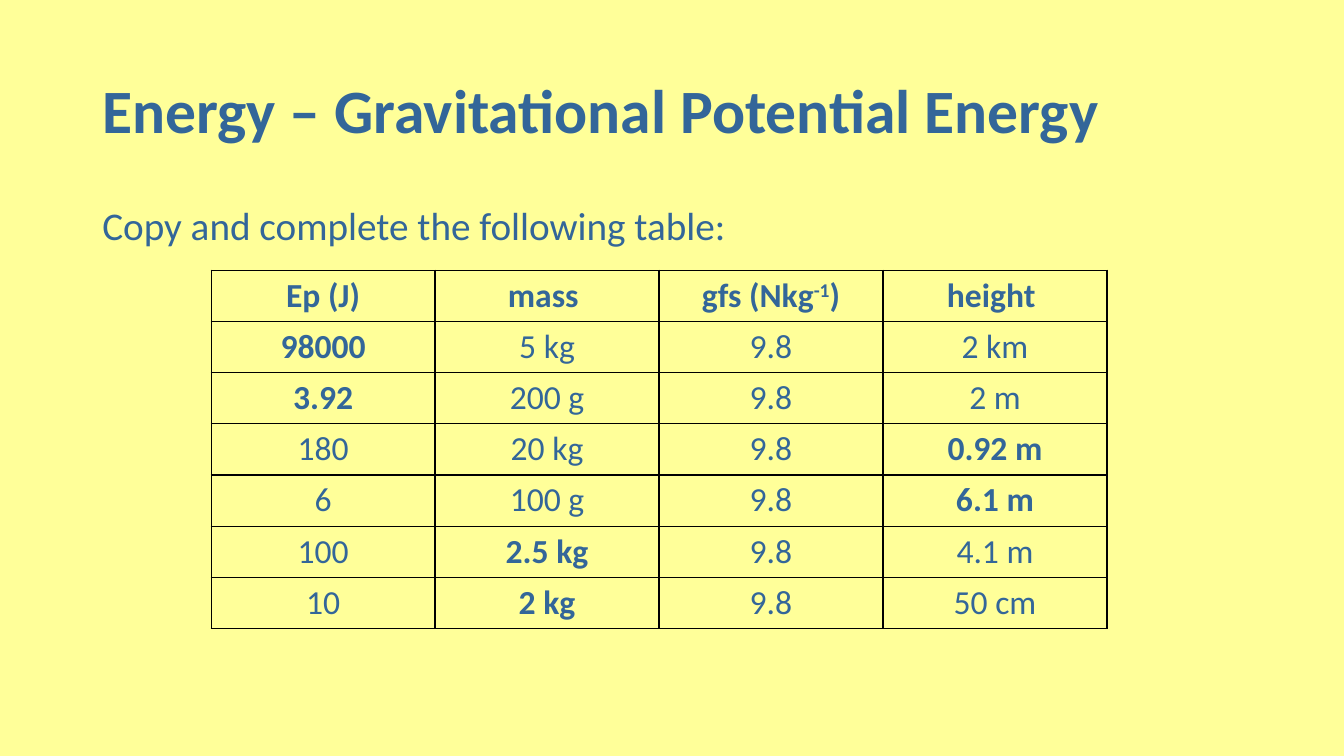
from lxml import etree
from pptx import Presentation
from pptx.dml.color import RGBColor
from pptx.enum import text
from pptx.oxml import ns
from pptx.util import Cm, Pt

COLOURS = {"background": "FFFF99", "ink": "336699", "border": "000000"}
FONT = "Calibri"

# Each heading is a list of (wording, is superscript) runs.
HEADINGS = [
    [("Ep (J)", False)],
    [("mass ", False)],
    [("gfs (Nkg", False), ("-1", True), (")", False)],
    [("height ", False)],
]
# Each row holds its values and the column of the answer, which is bold.
EXERCISES = [
    (("98000", "5 kg", "9.8", "2 km"), 0),
    (("3.92", "200 g", "9.8", "2 m"), 0),
    (("180", "20 kg", "9.8", "0.92 m"), 3),
    (("6", "100 g", "9.8", "6.1 m"), 3),
    (("100", "2.5 kg", "9.8", "4.1 m"), 1),
    (("10", "2 kg", "9.8", "50 cm"), 1),
]


def add_run(paragraph, wording, size, bold=False, superscript=False):
    run = paragraph.add_run()
    run.text = wording
    run.font.name = FONT
    run.font.size = Pt(size)
    run.font.bold = bold
    run.font.color.rgb = RGBColor.from_string(COLOURS["ink"])
    if superscript:
        run._r.get_or_add_rPr().set("baseline", "30000")


def set_background(slide):
    fill = slide.background.fill
    fill.solid()
    fill.fore_color.rgb = RGBColor.from_string(COLOURS["background"])


def add_title(slide, wording):
    title = slide.shapes.title
    title.left, title.top = Cm(2.33), Cm(1.01)
    title.width, title.height = Cm(29.21), Cm(3.68)
    frame = title.text_frame
    frame.word_wrap = True
    frame.vertical_anchor = text.MSO_ANCHOR.MIDDLE
    heading = frame.paragraphs[0]
    heading.alignment = text.PP_ALIGN.LEFT
    heading.line_spacing = 0.9
    add_run(heading, wording, 44, bold=True)


def add_instruction(slide, wording):
    box = slide.shapes.add_textbox(Cm(2.33), Cm(5.07), Cm(29.21), Cm(12.09))
    box.text_frame.word_wrap = True
    instruction = box.text_frame.paragraphs[0]
    instruction.line_spacing = 0.9
    instruction.space_before = Pt(10)
    add_run(instruction, wording, 28)


def add_borders(cell):
    properties = cell._tc.get_or_add_tcPr()
    for index, side in enumerate(("a:lnL", "a:lnR", "a:lnT", "a:lnB")):
        line = etree.Element(ns.qn(side), w=str(Pt(1)))
        fill = etree.SubElement(line, ns.qn("a:solidFill"))
        etree.SubElement(fill, ns.qn("a:srgbClr"), val=COLOURS["border"])
        properties.insert(index, line)


def fill_cell(cell, runs, bold):
    cell.fill.background()
    add_borders(cell)
    paragraph = cell.text_frame.paragraphs[0]
    paragraph.alignment = text.PP_ALIGN.CENTER
    for wording, superscript in runs:
        add_run(paragraph, wording, 24, bold, superscript)


def add_exercise_table(slide):
    row_count = len(EXERCISES) + 1
    table = slide.shapes.add_table(
        row_count, len(HEADINGS), Cm(5.32), Cm(6.81), Cm(22.58), Cm(1.29) * row_count
    ).table
    table.horz_banding = False
    for column, runs in enumerate(HEADINGS):
        fill_cell(table.cell(0, column), runs, bold=True)
    for row, (values, answer) in enumerate(EXERCISES, start=1):
        for column, value in enumerate(values):
            fill_cell(table.cell(row, column), [(value, False)], column == answer)


def main():
    deck = Presentation()
    deck.slide_width, deck.slide_height = Cm(33.87), Cm(19.05)
    slide = deck.slides.add_slide(deck.slide_layouts[5])
    set_background(slide)
    add_title(slide, "Energy – Gravitational Potential Energy")
    add_instruction(slide, "Copy and complete the following table:")
    add_exercise_table(slide)
    deck.save("out.pptx")


if __name__ == "__main__":
    main()
